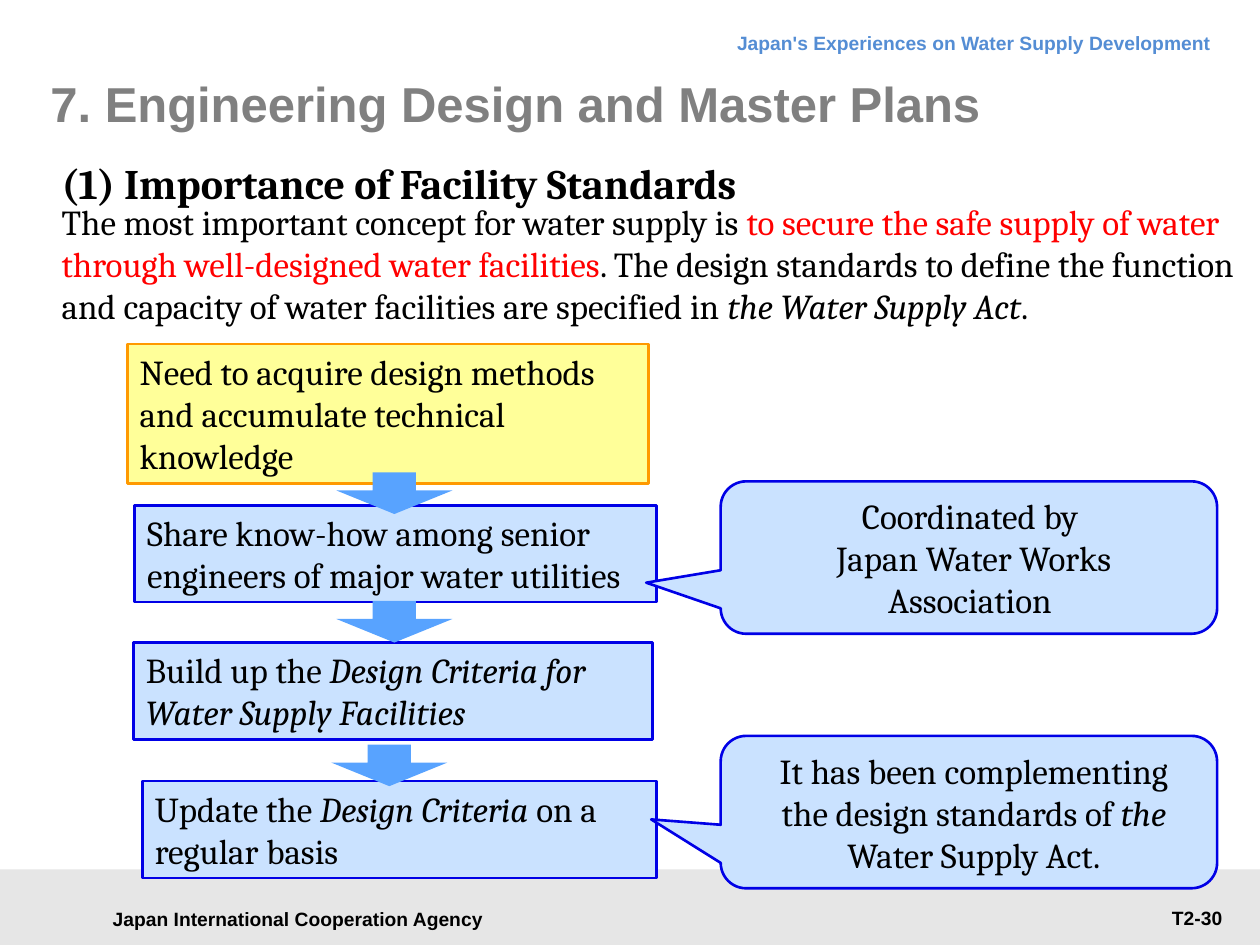
from dataclasses import dataclass

from pptx import Presentation
from pptx.dml.color import RGBColor
from pptx.enum.shapes import MSO_SHAPE as Shape
from pptx.enum.text import MSO_ANCHOR as Anchor, PP_ALIGN as Align
from pptx.util import Inches, Pt

COLS, ROWS = 100, 75  # grid of square cells over the slide


@dataclass(frozen=True)
class Theme:
    sans: str = "Arial"
    serif: str = "Cambria"
    small: int = 11
    body: int = 20
    heading: int = 24
    title: int = 28
    line: float = 1.5
    black: str = "000000"
    grey: str = "808080"
    band: str = "E6E6E6"
    header: str = "548DD4"
    red: str = "FF0000"
    blue: str = "0000E6"
    pale: str = "CAE2FF"
    arrow: str = "58A3FF"
    yellow: str = "FFFF99"
    orange: str = "FF9900"


def rgb(code):
    return RGBColor.from_string(code)


class Deck:
    def __init__(self, theme):
        self.t = theme
        self.prs = Presentation()
        self.prs.slide_width, self.prs.slide_height = Inches(10), Inches(7.5)
        self.s = self.prs.slides.add_slide(self.prs.slide_layouts[6])

    def place(self, at):
        """Turn (column, row, columns, rows) into slide lengths."""
        cw, rh = self.prs.slide_width / COLS, self.prs.slide_height / ROWS
        return [round(n * size) for n, size in zip(at, (cw, rh, cw, rh))]

    def fill_text(self, sp, paragraphs, size, font, color=None, bold=False,
                  align=Align.LEFT, anchor=Anchor.TOP, insets=None, wrap=True):
        """Each paragraph is a list of runs: text or (text, italic, color)."""
        tf = sp.text_frame
        tf.word_wrap, tf.vertical_anchor = wrap, anchor
        if insets:
            (tf.margin_left, tf.margin_top,
             tf.margin_right, tf.margin_bottom) = map(Inches, insets)
        for i, runs in enumerate(paragraphs):
            p = tf.add_paragraph() if i else tf.paragraphs[0]
            p.alignment = align
            for run in runs:
                text, italic, tint = (run, False, None) if isinstance(run, str) else run
                r = p.add_run()
                r.text = text
                r.font.name, r.font.size = font, Pt(size)
                r.font.bold, r.font.italic = bold, italic
                r.font.color.rgb = rgb(tint or color or self.t.black)
        return tf

    def text(self, at, runs, size, font, **style):
        box = self.s.shapes.add_textbox(*self.place(at))
        return self.fill_text(box, [runs], size, font, **style)

    def label(self, at, text, **style):
        return self.text(at, [text], self.t.small, self.t.sans, bold=True, **style)

    def shape(self, kind, at, fill, line=None, adjust=()):
        sp = self.s.shapes.add_shape(kind, *self.place(at))
        sp.shadow.inherit = False
        sp.fill.solid()
        sp.fill.fore_color.rgb = rgb(fill)
        if line:
            sp.line.color.rgb, sp.line.width = rgb(line), Pt(self.t.line)
        else:
            sp.line.fill.background()
        for i, value in enumerate(adjust):
            sp.adjustments[i] = value
        return sp

    def step(self, at, runs, fill=None, line=None):
        sp = self.shape(Shape.RECTANGLE, at, fill or self.t.pale, line or self.t.blue)
        self.fill_text(sp, [runs], self.t.body, self.t.serif)

    def callout(self, row, paragraphs, tip):
        sp = self.shape(Shape.ROUNDED_RECTANGULAR_CALLOUT, (57.2, row, 39.4, 12.1),
                        self.t.pale, self.t.blue, (*tip, 0.167))
        self.fill_text(sp, paragraphs, self.t.body, self.t.serif, align=Align.CENTER,
                       anchor=Anchor.MIDDLE, insets=(0.2, 0.04, 0.12, 0.04))

    def down_arrow(self, col, row):
        self.shape(Shape.DOWN_ARROW, (col, row, 9.2, 3.3), self.t.arrow, adjust=(0.373, 0.566))


def main():
    t = Theme()
    d = Deck(t)

    # Footer band and running labels
    d.shape(Shape.RECTANGLE, (0, 69, COLS, 6), t.band)
    d.label((7.1, 71.2, 33.1, 3.4), "Japan International Cooperation Agency",
            align=Align.CENTER, anchor=Anchor.MIDDLE)
    header = d.label((27.2, 1.3, 69.9, 3.8), "Japan's Experiences on Water Supply Development",
                     color=t.header, align=Align.RIGHT)
    header.paragraphs[0].line_spacing = Pt(18)
    d.label((82.3, 71.4, 15.7, 2.9), "T2-30", align=Align.RIGHT)

    # Title, heading and introduction
    d.text((4, 4.2, 94.1, 7.9), ["7. Engineering Design and Master Plans"], t.title, t.sans,
           color=t.grey, bold=True, anchor=Anchor.MIDDLE, insets=(0, 0, 0, 0))
    d.text((3.9, 15.4, 96.1, 11.1), [
        "The most important concept for water supply is ",
        ("to secure the safe supply of water through well-designed water facilities", False, t.red),
        ". The design standards to define the function and capacity of water facilities"
        " are specified in ",
        ("the Water Supply Act", True, None), "."], t.body, t.serif)
    d.text((3.9, 12, 58.7, 5), ["(1) Importance of Facility Standards"], t.heading, t.serif,
           bold=True, wrap=False)

    # Steps and callouts
    d.step((11.3, 62, 40.8, 7.7),
           ["Update the ", ("Design Criteria ", True, None), "on a regular basis"])
    d.callout(58.4, [["It has been complementing the design standards of ",
                      ("the ", True, None), "Water Supply Act."]], (-0.64, 0.048))
    d.step((10.7, 40.1, 41.4, 7.7),
           ["Share know-how among senior engineers of major water utilities"])
    d.step((10.1, 27.3, 41.4, 11.1),
           ["Need to acquire design methods and accumulate technical knowledge"],
           t.yellow, t.orange)
    d.callout(38.2, [["Coordinated by "], ["Japan Water Works Association "]], (-0.65, 0.165))
    d.step((10.6, 51, 41.2, 7.7),
           ["Build up the ", ("Design Criteria for Water Supply Facilities", True, None)])

    # Arrows between the steps
    for col, row in ((26.7, 37.5), (26.7, 47.7), (26.3, 59.1)):
        d.down_arrow(col, row)

    d.prs.save("out.pptx")


if __name__ == "__main__":
    main()
